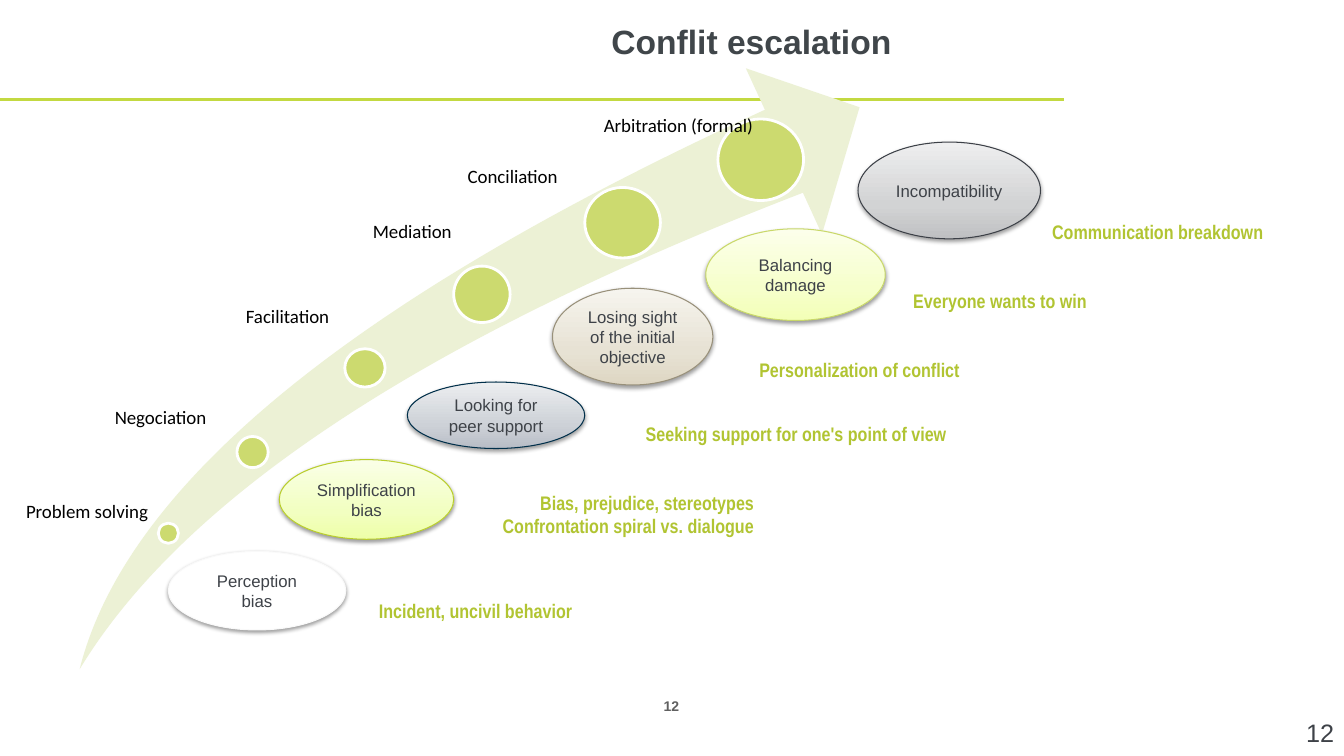
from copy import deepcopy

from lxml import etree
from pptx import Presentation
from pptx import util as u
from pptx.dml.color import RGBColor
from pptx.enum import shapes, text
from pptx.oxml import ns

LIME = RGBColor(0xC3, 0xD9, 0x41)
PALE_LIME = RGBColor(0xEC, 0xF1, 0xD5)
DOT_GREEN = RGBColor(0xCC, 0xDA, 0x6F)
SIGN_GREEN = RGBColor(0xB1, 0xC4, 0x32)
WHITE = RGBColor(0xFF, 0xFF, 0xFF)
BLACK = RGBColor(0, 0, 0)
TITLE_GREY = RGBColor(0x40, 0x46, 0x4A)
TEXT_GREY = RGBColor(0x3E, 0x42, 0x48)
PAGE_GREY = RGBColor(0x60, 0x60, 0x60)
PERCEPTION = (RGBColor(0xF9, 0xF9, 0xF9), [WHITE])
SIMPLIFICATION = (RGBColor(0xB9, 0xCD, 0x2E), [
    RGBColor(0xEE, 0xFF, 0xA8), RGBColor(0xF2, 0xFF, 0xC1), RGBColor(0xFA, 0xFF, 0xE7)])
PEER_SUPPORT = (RGBColor(0x00, 0x2F, 0x4A), [
    RGBColor(0xB8, 0xBD, 0xC6), RGBColor(0xCD, 0xD1, 0xD7), RGBColor(0xEC, 0xEE, 0xF0)])
LOST_OBJECTIVE = (RGBColor(0x98, 0x90, 0x7A), [
    RGBColor(0xDE, 0xD6, 0xC3), RGBColor(0xE7, 0xE2, 0xD4), RGBColor(0xF6, 0xF4, 0xEE)])
BALANCING = (RGBColor(0xC9, 0xD8, 0x6A), [
    RGBColor(0xF3, 0xFF, 0xB7), RGBColor(0xF6, 0xFF, 0xCB), RGBColor(0xFC, 0xFF, 0xEB)])
INCOMPATIBLE = (RGBColor(0x3C, 0x40, 0x47), [
    RGBColor(0xBF, 0xC0, 0xC2), RGBColor(0xD2, 0xD3, 0xD4), RGBColor(0xEE, 0xEE, 0xEF)])

GRADIENT_POSITIONS = (0, 0.35, 1)
LEFT, CENTER, RIGHT = text.PP_ALIGN.LEFT, text.PP_ALIGN.CENTER, text.PP_ALIGN.RIGHT
TOP, MIDDLE = text.MSO_ANCHOR.TOP, text.MSO_ANCHOR.MIDDLE
TITLE_FONT = {"name": "Arial", "size": u.Pt(24), "bold": True}
PAGE_FONT = {"name": "Arial", "size": u.Pt(10), "bold": True}
CORNER_FONT = {"name": "Arial", "size": u.Pt(18)}
BIAS_FONT = {"name": "Arial", "size": u.Pt(12)}
SIGN_FONT = {"name": "Arial Narrow", "size": u.Pt(14), "bold": True}
RESPONSE_FONT = {"name": "Calibri", "size": u.Pt(13.5)}

RESPONSES = [
    ("Problem solving", (0.16, 3.91, 1.47), (1.57, 4.19, 0.2, 0.2)),
    ("Negociation", (1.04, 2.98, 1.17), (2.35, 3.33, 0.31, 0.31)),
    ("Facilitation", (2.34, 1.97, 1.09), (3.42, 2.46, 0.4, 0.38)),
    ("Mediation", (3.6, 1.13, 1.04), (4.5, 1.64, 0.56, 0.56)),
    ("Conciliation", (4.54, 0.58, 1.15), (5.8, 0.86, 0.75, 0.7)),
    ("Arbitration (formal)", (5.89, 0.08, 1.75), (7.12, 0.18, 0.85, 0.81)),
]
BIASES = [
    ("Perception bias", (1.67, 4.47, 1.76, 0.78), PERCEPTION),
    ("Simplification bias", (2.77, 3.56, 1.73, 0.79), SIMPLIFICATION),
    ("Looking for peer support", (4.04, 2.79, 1.76, 0.66), PEER_SUPPORT),
    ("Losing sight of the initial objective", (5.48, 1.86, 1.59, 0.96), LOST_OBJECTIVE),
    ("Balancing damage", (7, 1.27, 1.78, 0.91), BALANCING),
    ("Incompatibility", (8.51, 0.41, 1.81, 0.96), INCOMPATIBLE),
]
SIGNS = [
    (["Incident, uncivil behavior"], (3.66, 4.89, 2.14, 0.34), LEFT, False),
    (["Bias, prejudice, stereotypes", "Confrontation spiral vs. dialogue"],
     (4.51, 3.82, 3.07, 0.57), RIGHT, True),
    (["Seeking support for one's point of view"], (5.63, 3.14, 3.86, 0.34), RIGHT, True),
    (["Personalization of conflict"], (7.41, 2.5, 2.21, 0.34), RIGHT, False),
    (["Everyone wants to win"], (8.94, 1.82, 1.94, 0.34), RIGHT, False),
    (["Communication breakdown"], (10.16, 1.13, 2.47, 0.34), RIGHT, True),
]


def place(box, at):
    """Return slide lengths for a rectangle measured from the corner of a box."""
    left, top, width, height = at
    return [u.Inches(n) for n in (box[0] + left, box[1] + top, width, height)]


def write(frame, lines, font, color, align=LEFT, anchor=TOP, wrap=True):
    """Fill a text frame with formatted lines."""
    frame.word_wrap = wrap
    frame.vertical_anchor = anchor
    for number, line in enumerate(lines):
        paragraph = frame.add_paragraph() if number else frame.paragraphs[0]
        paragraph.alignment = align
        run = paragraph.add_run()
        run.text = line
        for key, value in font.items():
            setattr(run.font, key, value)
        run.font.color.rgb = color


def add_label(slide, box, at, lines, font, color, **layout):
    """Add a text box and return its frame."""
    frame = slide.shapes.add_textbox(*place(box, at)).text_frame
    write(frame, lines, font, color, **layout)
    return frame


def add_figure(slide, box, at, kind, colors, outline=None, weight=0.75):
    """Add a preset shape with a plain or three-stop fill."""
    figure = slide.shapes.add_shape(kind, *place(box, at))
    figure.shadow.inherit = False
    if len(colors) == 1:
        figure.fill.solid()
        figure.fill.fore_color.rgb = colors[0]
    else:
        figure.fill.gradient()
        figure.fill.gradient_angle = 90
        stop_list = figure._element.spPr.find(".//" + ns.qn("a:gsLst"))
        stop_list.append(deepcopy(stop_list[0]))
        for stop, color, position in zip(figure.fill.gradient_stops, colors, GRADIENT_POSITIONS):
            stop.color.rgb = color
            stop.position = position
    if outline is None:
        figure.line.fill.background()
    else:
        figure.line.color.rgb = outline
        figure.line.width = u.Pt(weight)
    return figure


def add_drop_shadow(figure):
    """Give a shape a soft shadow straight below it."""
    effects = figure._element.spPr.find(ns.qn("a:effectLst"))
    shadow = etree.SubElement(effects, ns.qn("a:outerShdw"), blurRad=str(u.Pt(3.1)),
                              dist=str(u.Pt(1.6)), dir="5400000", rotWithShape="0")
    color = etree.SubElement(shadow, ns.qn("a:srgbClr"), val="000000")
    etree.SubElement(color, ns.qn("a:alpha"), val="38000")


def draw_header(slide, box):
    """Draw the title and the rule under it."""
    left, top, width, height = place(box, (0, 0, 10.55, 0.99))
    rule = slide.shapes.add_connector(shapes.MSO_CONNECTOR.STRAIGHT,
                                      left + width, top + height, left, top + height)
    rule.line.color.rgb = LIME
    rule.line.width = u.Pt(2)
    etree.SubElement(rule._element.spPr, ns.qn("a:effectLst"))
    add_label(slide, box, (3.82, 0.02, 5.12, 0.77), ["Conflit escalation"],
              TITLE_FONT, TITLE_GREY, align=RIGHT, anchor=MIDDLE)


def draw_responses(slide, box):
    """Draw the rising arrow with its dots and the response beside each."""
    arrow = add_figure(slide, box, (0, 0.71, 9.09, 3.6),
                       shapes.MSO_SHAPE.SWOOSH_ARROW, [PALE_LIME])
    arrow.rotation = 341.8
    arrow.adjustments[0] = arrow.adjustments[1] = 0.25
    for response, label_at, dot_at in RESPONSES:
        add_figure(slide, box, dot_at, shapes.MSO_SHAPE.OVAL, [DOT_GREEN], WHITE, 2)
        frame = add_label(slide, box, (*label_at, 0.33), [response],
                          RESPONSE_FONT, BLACK, wrap=False)
        frame.auto_size = text.MSO_AUTO_SIZE.SHAPE_TO_FIT_TEXT


def draw_biases(slide, box):
    """Draw the ovals of the escalation steps."""
    for bias, at, (outline, colors) in BIASES:
        oval = add_figure(slide, box, at, shapes.MSO_SHAPE.OVAL, colors, outline)
        add_drop_shadow(oval)
        write(oval.text_frame, [bias], BIAS_FONT, TEXT_GREY, CENTER, MIDDLE)


def draw_signs(slide, box):
    """Write the visible signs of each escalation step."""
    for lines, at, align, wrap in SIGNS:
        frame = add_label(slide, box, at, lines, SIGN_FONT, SIGN_GREEN, align=align, wrap=wrap)
        frame.auto_size = text.MSO_AUTO_SIZE.SHAPE_TO_FIT_TEXT


def draw_footer(slide, box):
    """Write the page number in the middle and in the corner."""
    add_label(slide, box, (6.4, 0.08, 0.52, 0.24), ["12"], PAGE_FONT, PAGE_GREY,
              align=CENTER, anchor=MIDDLE)
    add_label(slide, box, (12.78, 0.27, 0.55, 0.4), ["12"], CORNER_FONT, TEXT_GREY,
              align=RIGHT, anchor=MIDDLE, wrap=False)


def main():
    """Build the slide and save it."""
    deck = Presentation()
    deck.slide_width, deck.slide_height = u.Inches(13.33), u.Inches(7.5)
    slide = deck.slides.add_slide(deck.slide_layouts[6])
    diagram = (0, 1)
    draw_header(slide, (0, 0))
    draw_responses(slide, diagram)
    draw_biases(slide, diagram)
    draw_signs(slide, diagram)
    draw_footer(slide, (0, 6.8))
    deck.save("out.pptx")


if __name__ == "__main__":
    main()
